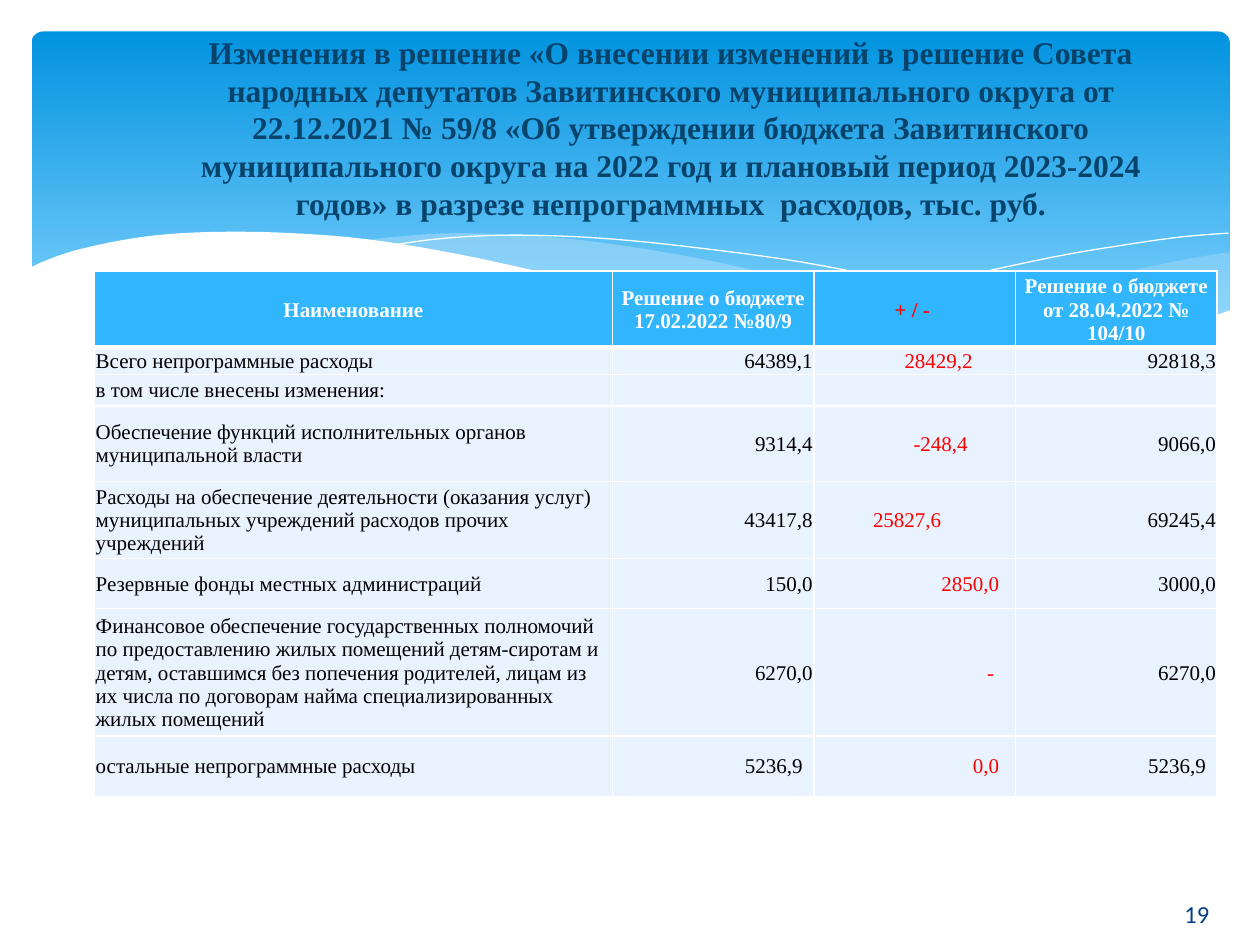
from lxml.etree import SubElement
from pptx import Presentation
from pptx.dml.color import RGBColor as RGB
from pptx.enum.shapes import MSO_SHAPE as SHAPE
from pptx.enum.text import MSO_ANCHOR as ANCHOR, PP_ALIGN as ALIGN
from pptx.oxml.ns import qn
from pptx.util import Inches, Pt

THEME = {
    "sky_top": "0293E0", "sky_bottom": "83D3FE", "mist": "C6E7FC",
    "white": "FFFFFF", "head": "31B6FD", "body": "E8F3FF",
    "title": "06436B", "text": "000000", "change": "FF0000", "number": "073E87",
    "serif": "Times New Roman", "sans": "Calibri",
    "title_size": 18, "table_size": 12, "number_size": 14,
}

TITLE = ("Изменения в решение «О внесении изменений в решение Совета народных депутатов "
         "Завитинского муниципального округа от 22.12.2021 № 59/8 «Об утверждении бюджета "
         "Завитинского муниципального округа на 2022 год и плановый период 2023-2024 годов» "
         "в разрезе непрограммных  расходов, тыс. руб.")
NUMBER = "19"

ROWS = [
    ("Наименование", "Решение о бюджете 17.02.2022 №80/9", "+ / -",
     "Решение о бюджете от 28.04.2022 № 104/10"),
    ("Всего непрограммные расходы", "64389,1", "28429,2", "92818,3"),
    ("в том числе внесены изменения:", "", "", ""),
    ("Обеспечение функций исполнительных органов муниципальной власти",
     "9314,4", "-248,4", "9066,0"),
    ("Расходы на обеспечение деятельности (оказания услуг) муниципальных учреждений "
     "расходов прочих учреждений", "43417,8", "25827,6", "69245,4"),
    ("Резервные фонды местных администраций", "150,0", "2850,0", "3000,0"),
    ("Финансовое обеспечение государственных полномочий по предоставлению жилых помещений "
     "детям-сиротам и детям, оставшимся без попечения родителей, лицам из их числа по "
     "договорам найма специализированных жилых помещений", "6270,0", "-", "6270,0"),
    ("остальные непрограммные расходы", "5236,9", "0,0", "5236,9"),
]
COL_WIDTHS = [4.11, 1.6, 1.6, 1.6]
ROW_HEIGHTS = [0.57, 0.21, 0.25, 0.6, 0.6, 0.4, 0.8, 0.48]
RIGHT_INDENTS = {(0, 2): 0.05, (1, 2): 0.34, (3, 2): 0.38, (4, 2): 0.59, (5, 2): 0.13,
                 (6, 2): 0.17, (7, 1): 0.09, (7, 2): 0.13, (7, 3): 0.09}

RIGHT_MIST = [
    [(9.76, 2), (9.35, 2.07), (8.61, 2.23), (7.79, 2.42), (7.06, 2.57), (6.61, 2.65)],
    [(6.61, 2.65), (7.05, 2.71), (7.57, 2.76), (8.14, 2.78), (8.63, 2.75), (9.05, 2.69),
     (9.42, 2.59), (9.76, 2.47)],
]
LEFT_MIST = [
    [(8.93, 2.73), (8.37, 2.65), (7.75, 2.54), (7.06, 2.4), (6.29, 2.22), (5.69, 2.08),
     (5.14, 1.98), (4.65, 1.91), (4.2, 1.87), (3.61, 1.85), (3.13, 1.88), (2.86, 1.91)],
    [(2.86, 1.91), (3.42, 1.99), (4.04, 2.11), (4.91, 2.32), (5.66, 2.48), (6.34, 2.61),
     (6.95, 2.7), (7.48, 2.76), (8.07, 2.78), (8.57, 2.77), (8.93, 2.73)],
]
LEFT_LINE = [[(3.09, 1.95), (3.44, 1.9), (3.87, 1.87), (4.33, 1.87), (4.89, 1.9), (5.56, 1.97),
              (6.36, 2.08), (7.27, 2.26), (8.31, 2.51), (9.07, 2.72)]]
RIGHT_LINE = [[(6.13, 2.57), (6.72, 2.41), (7.48, 2.23), (8.36, 2.04), (8.95, 1.94),
               (9.38, 1.88), (9.75, 1.85)]]
WHITE_WAVE = [
    [(9.77, 2.46), (9.4, 2.59), (8.99, 2.69), (8.5, 2.75), (8.09, 2.77), (7.61, 2.75),
     (6.88, 2.68), (6.03, 2.54), (5.29, 2.39), (4.47, 2.2), (3.65, 2.02), (2.92, 1.9),
     (2.3, 1.85), (1.77, 1.84), (1.32, 1.86), (0.95, 1.91), (0.59, 1.99), (0.36, 2.07),
     (0.23, 2.13)],
    [(0.23, 3.29), (9.77, 3.29)],
]
WAVES = [(RIGHT_MIST, "mist", 29), (LEFT_MIST, "mist", 40), (LEFT_LINE, None, 100),
         (RIGHT_LINE, None, 100), (WHITE_WAVE, "white", 100)]


def color(name):
    return RGB.from_string(THEME[name])


def box(*lengths):
    return [Inches(v) for v in lengths]


def assign(obj, values):
    for name, value in values.items():
        setattr(obj, name, value)


def write(tf, text, size, ink, font, align, bold=False):
    p = tf.paragraphs[0]
    p.alignment = align
    if not text:
        SubElement(p._p, qn("a:endParaRPr"), sz=str(THEME[size] * 100))
        return
    r = p.add_run()
    r.text = text
    assign(r.font, {"size": Pt(THEME[size]), "name": THEME[font], "bold": bold})
    r.font.color.rgb = color(ink)


def smooth(knots, steps=5):
    if len(knots) < 3:
        return knots
    padded = [knots[0], *knots, knots[-1]]
    points = [knots[0]]
    for a, b, c, d in zip(padded, padded[1:], padded[2:], padded[3:]):
        for i in range(1, steps + 1):
            t = i / steps
            points.append(tuple(
                0.5 * (2 * q + (r - p) * t + (2 * p - 5 * q + 4 * r - s) * t ** 2
                       + (3 * q - p - 3 * r + s) * t ** 3)
                for p, q, r, s in zip(a, b, c, d)))
    return points


def add_wave(slide, curves, fill, alpha):
    points = [box(*pt) for curve in curves for pt in smooth(curve)]
    builder = slide.shapes.build_freeform(*points[0], scale=1.0)
    builder.add_line_segments(points[1:], close=fill is not None)
    sp = builder.convert_to_shape()
    sp.shadow.inherit = False
    if fill is None:
        sp.fill.background()
        sp.line.color.rgb = color("white")
        sp.line.width = Pt(0)
        return
    sp.fill.solid()
    sp.fill.fore_color.rgb = color(fill)
    sp.line.fill.background()
    if alpha < 100:
        clr = sp._element.spPr.find(qn("a:solidFill"))[0]
        SubElement(clr, qn("a:alpha"), val=str(alpha * 1000))


def add_sky(slide):
    sp = slide.shapes.add_shape(SHAPE.ROUNDED_RECTANGLE, *box(0.25, 0.25, 9.51, 2.7))
    sp.adjustments[0] = 0.034
    sp.shadow.inherit = False
    sp.line.fill.background()
    sp.fill.gradient()
    sp.fill.gradient_angle = 270
    for stop, name, position in zip(sp.fill.gradient_stops, ("sky_top", "sky_bottom"), (0, 0.9)):
        stop.color.rgb = color(name)
        stop.position = position


def set_borders(cell, widths):
    tcPr = cell._tc.get_or_add_tcPr()
    for side, width in widths.items():
        ln = SubElement(tcPr, qn(f"a:ln{side}"), w=str(Pt(width)))
        SubElement(SubElement(ln, qn("a:solidFill")), qn("a:srgbClr"), val=THEME["white"])


def add_budget_table(slide):
    table = slide.shapes.add_table(len(ROWS), len(COL_WIDTHS), *box(
        0.75, 2.15, sum(COL_WIDTHS), sum(ROW_HEIGHTS))).table
    for col, width in zip(table.columns, COL_WIDTHS):
        col.width = Inches(width)
    for i, (row, height) in enumerate(zip(ROWS, ROW_HEIGHTS)):
        table.rows[i].height = Inches(height)
        head = i == 0
        for j, text in enumerate(row):
            cell = table.cell(i, j)
            assign(cell, {"margin_left": Inches(0.01), "margin_top": Inches(0.01),
                          "margin_right": Inches(RIGHT_INDENTS.get((i, j), 0.01)),
                          "margin_bottom": 0, "vertical_anchor": ANCHOR.MIDDLE})
            set_borders(cell, {"L": 1, "R": 1, "T": 3 if i == 1 else 1, "B": 3 if head else 1})
            cell.fill.solid()
            cell.fill.fore_color.rgb = color("head" if head else "body")
            ink = "change" if j == 2 else "white" if head else "text"
            align = ALIGN.CENTER if head else ALIGN.RIGHT if j else ALIGN.LEFT
            write(cell.text_frame, text, "table_size", ink, "serif", align, head)


def place_title(slide):
    title = slide.shapes.title
    slide.shapes._spTree.append(title._element)
    assign(title, dict(zip(("left", "top", "width", "height"), box(1.15, 0.21, 8.35, 1.62))))
    assign(title.text_frame, {"word_wrap": True, "vertical_anchor": ANCHOR.TOP})
    write(title.text_frame, TITLE, "title_size", "title", "serif", ALIGN.CENTER, True)


def add_number(slide):
    tf = slide.shapes.add_textbox(*box(9.03, 6.89, 0.94, 0.73)).text_frame
    assign(tf, {"word_wrap": True, "vertical_anchor": ANCHOR.MIDDLE})
    write(tf, NUMBER, "number_size", "number", "sans", ALIGN.CENTER)


def main():
    prs = Presentation()
    assign(prs, {"slide_width": Inches(10), "slide_height": Inches(7.5)})
    slide = prs.slides.add_slide(prs.slide_layouts[5])
    add_sky(slide)
    for wave in WAVES:
        add_wave(slide, *wave)
    place_title(slide)
    add_number(slide)
    add_budget_table(slide)
    prs.save("out.pptx")


if __name__ == "__main__":
    main()
